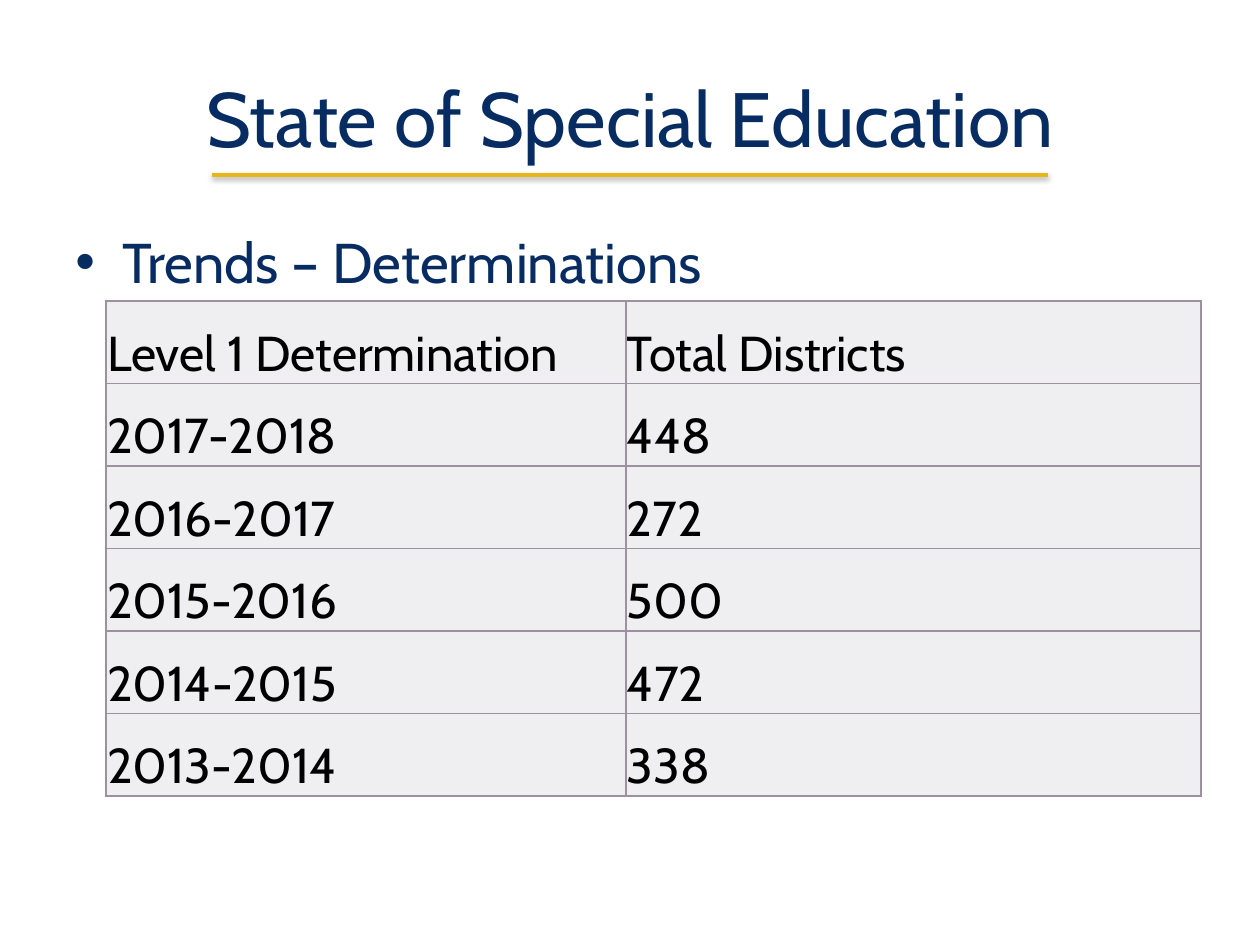
import pptx
import pptx.dml.color
import pptx.enum.shapes
import pptx.enum.text
import pptx.oxml
import pptx.oxml.ns
import pptx.util

NAVY = pptx.dml.color.RGBColor(0x07, 0x2C, 0x62)
GOLD = pptx.dml.color.RGBColor(0xE7, 0xB6, 0x17)
BLACK = pptx.dml.color.RGBColor(0x00, 0x00, 0x00)
PALE = pptx.dml.color.RGBColor(0xEF, 0xEE, 0xF0)
MAUVE = pptx.dml.color.RGBColor(0x9D, 0x90, 0xA0)

NAMESPACE = pptx.oxml.ns.nsdecls("a")
ANCHOR = pptx.enum.text.MSO_ANCHOR

DETERMINATIONS = [
    ("Level 1 Determination", "Total Districts"),
    ("2017-2018", "448"),
    ("2016-2017", "272"),
    ("2015-2016", "500"),
    ("2014-2015", "472"),
    ("2013-2014", "338"),
]


def px(length):
    return pptx.util.Emu(round(length * 914400 / 126))


class SlideBuilder:
    font = "Cabin"

    def __init__(self, deck):
        self.page = deck.slides.add_slide(deck.slide_layouts[5])

    def add_span(self, para, text, size, color):
        span = para.add_run()
        span.text = text
        span.font.name = self.font
        span.font.size = pptx.util.Pt(size)
        span.font.bold = False
        span.font.color.rgb = color

    def title(self, text, left, top, width, height):
        box = self.page.shapes.title
        box.left, box.top, box.width, box.height = map(px, (left, top, width, height))
        box.text_frame.vertical_anchor = ANCHOR.MIDDLE
        para = box.text_frame.paragraphs[0]
        para.alignment = pptx.enum.text.PP_ALIGN.CENTER
        self.add_span(para, text, 44, NAVY)

    def rule(self, left, right, y):
        line = self.page.shapes.add_connector(
            pptx.enum.shapes.MSO_CONNECTOR.STRAIGHT, px(left), px(y), px(right), px(y))
        line.line.color.rgb = GOLD
        line.line.width = pptx.util.Pt(2)
        line._element.spPr.append(pptx.oxml.parse_xml(
            f'<a:effectLst {NAMESPACE}><a:outerShdw blurRad="40000" dist="20000" dir="5400000" '
            'rotWithShape="0"><a:srgbClr val="000000"><a:alpha val="38000"/></a:srgbClr>'
            '</a:outerShdw></a:effectLst>'))

    def bullet(self, text, left, top, width, height):
        box = self.page.shapes.add_textbox(*map(px, (left, top, width, height)))
        box.text_frame.word_wrap = True
        para = box.text_frame.paragraphs[0]
        properties = para._p.get_or_add_pPr()
        properties.set("marL", "342900")
        properties.set("indent", "-342900")
        for markup in ('buFont {} typeface="Arial"', 'buChar {} char="•"'):
            properties.append(pptx.oxml.parse_xml(f"<a:{markup.format(NAMESPACE)}/>"))
        self.add_span(para, text, 32, NAVY)

    def table(self, rows, left, top, widths, height):
        table = self.page.shapes.add_table(
            len(rows), len(widths), px(left), px(top), px(sum(widths)), px(height)).table
        for column, width in zip(table.columns, widths):
            column.width = px(width)
        for row, texts in zip(table.rows, rows):
            for cell, text in zip(row.cells, texts):
                self.cell(cell, text)

    def cell(self, cell, text):
        cell.margin_left = cell.margin_right = cell.margin_top = px(1)
        cell.margin_bottom = 0
        cell.vertical_anchor = ANCHOR.BOTTOM
        properties = cell._tc.get_or_add_tcPr()
        for side in "LRTB":
            properties.append(pptx.oxml.parse_xml(
                f'<a:ln{side} {NAMESPACE} w="12700"><a:solidFill><a:srgbClr val="{MAUVE}"/>'
                f'</a:solidFill></a:ln{side}>'))
        cell.fill.solid()
        cell.fill.fore_color.rgb = PALE
        self.add_span(cell.text_frame.paragraphs[0], text, 28, BLACK)


def main():
    deck = pptx.Presentation()
    deck.slide_width, deck.slide_height = px(1260), px(945)
    builder = SlideBuilder(deck)
    builder.rule(212, 1048, 175)
    builder.title("State of Special Education", 63, 38, 1134, 158)
    builder.bullet("Trends – Determinations", 63, 221, 1134, 624)
    builder.table(DETERMINATIONS, 106, 301, (520, 575), 495)
    deck.save("out.pptx")


if __name__ == "__main__":
    main()
